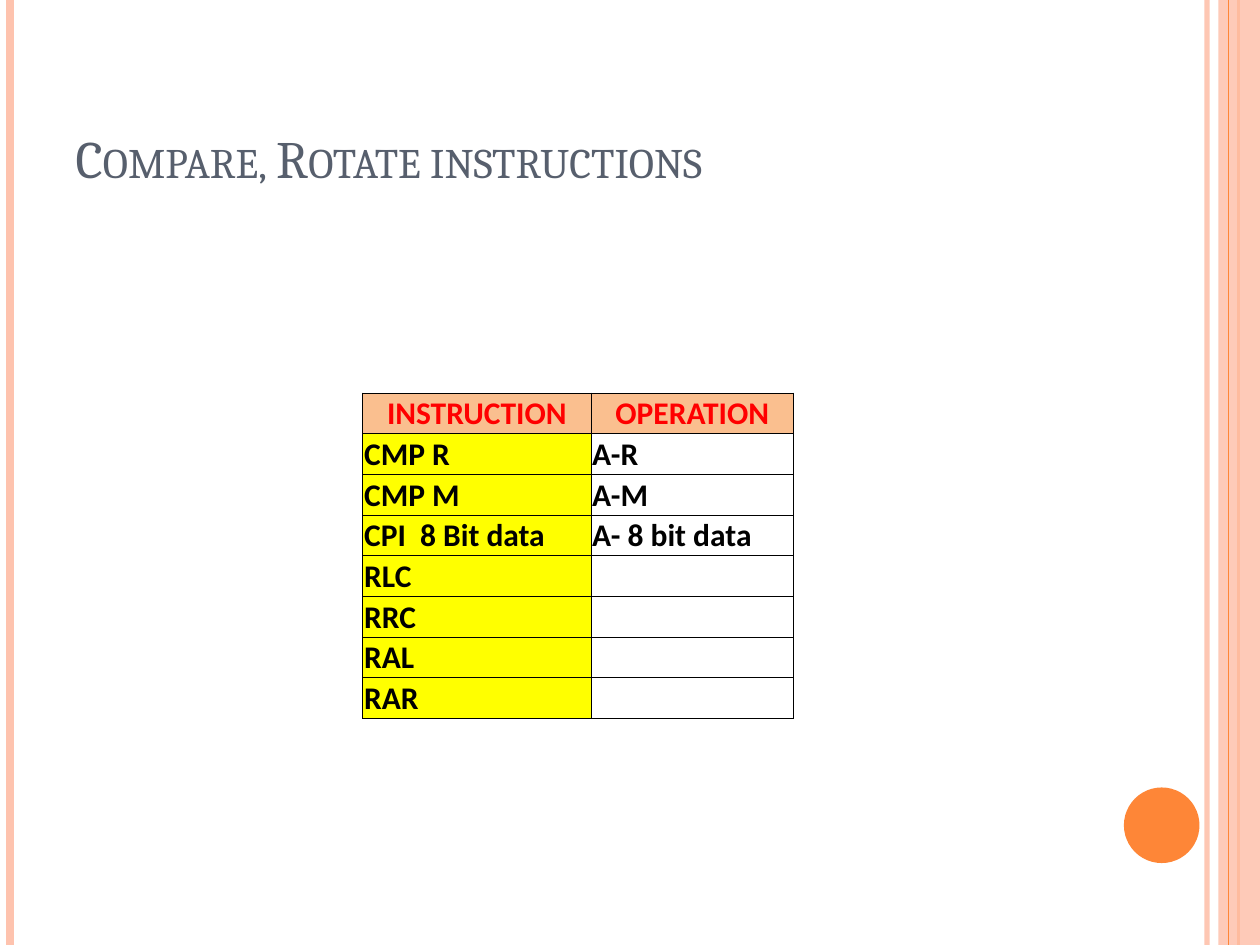
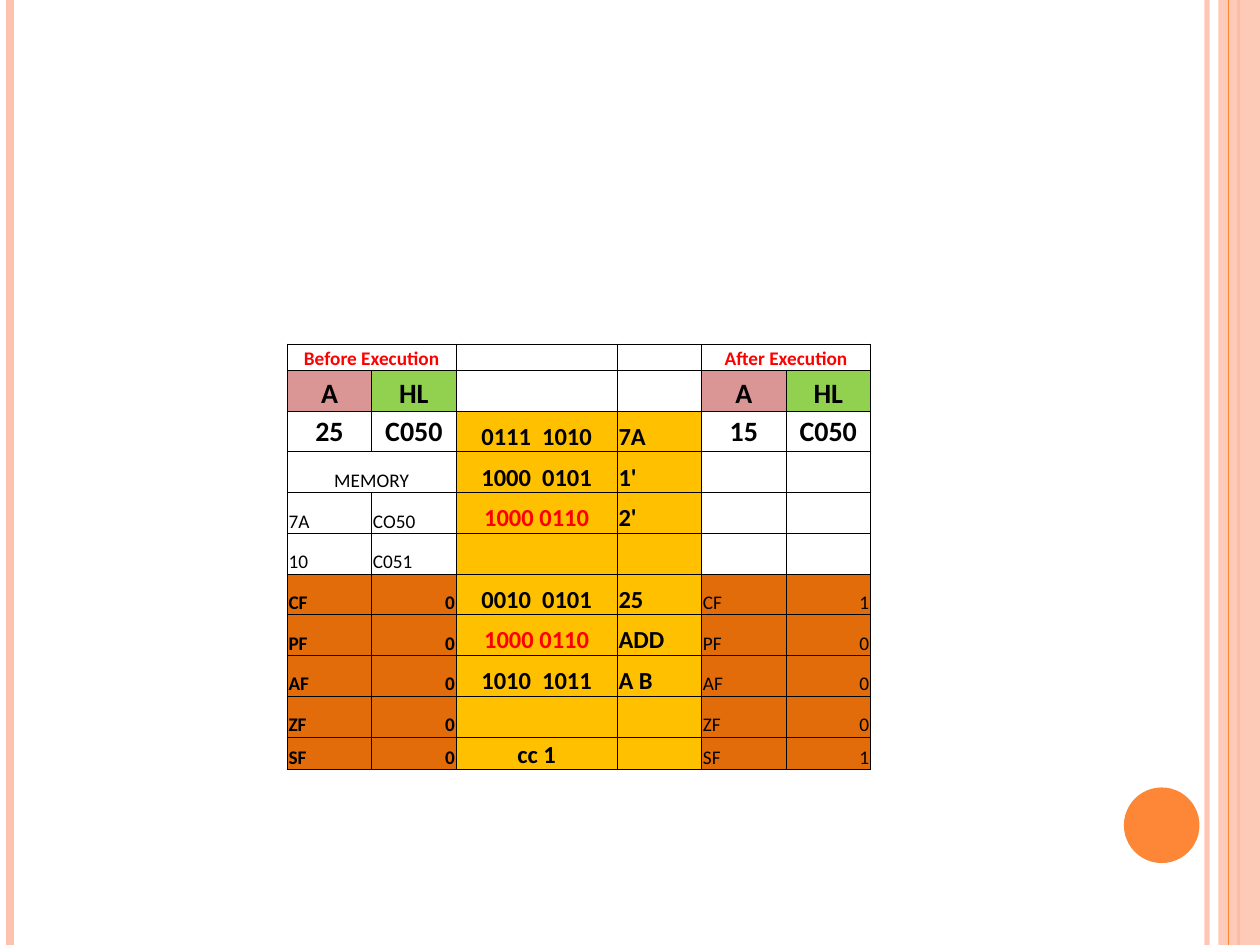
from dataclasses import dataclass, replace
from typing import NamedTuple

from lxml.etree import SubElement
from pptx import Presentation
from pptx.dml.color import RGBColor
from pptx.enum.shapes import MSO_CONNECTOR, MSO_SHAPE
from pptx.enum.text import MSO_ANCHOR, PP_ALIGN
from pptx.oxml.ns import qn
from pptx.util import Inches, Pt

COLORS = {
    "peach": "FEC3AE", "orange": "FE8637", "slate": "575F6D",
    "black": "000000", "red": "FF0000", "sand": "FABF8F",
    "yellow": "FFFF00", "rose": "DA9694", "green": "92D050",
    "gold": "FFC000", "rust": "E26B0A",
}
SLIDE_W, SLIDE_H = 10, 7.5


class Rule(NamedTuple):
    """A full-height vertical line."""
    x: float
    color: str
    width: float
    alpha: int = 100


class Block(NamedTuple):
    """A filled decoration without an outline."""
    kind: MSO_SHAPE
    box: tuple[float, float, float, float]
    color: str
    alpha: int = 100


@dataclass(frozen=True)
class Style:
    """The look of a table cell."""
    size: int = 11
    bold: bool = True
    color: str = "black"
    fill: str | None = None
    align: PP_ALIGN = PP_ALIGN.LEFT
    anchor: MSO_ANCHOR = MSO_ANCHOR.BOTTOM


class Cell(NamedTuple):
    """A table cell with its column span."""
    text: str = ""
    style: Style = Style()
    span: int = 1


DECOR = (
    Rule(9.58, "peach", 3, 93),
    Rule(0.08, "peach", 4.5),
    Rule(9.83, "orange", 1.5),
    Block(MSO_SHAPE.RECTANGLE, (9.67, 0, 0.33, SLIDE_H), "peach", 87),
    Rule(9.75, "orange", 0.75),
    Block(MSO_SHAPE.OVAL, (8.92, 6.25, 0.6, 0.6), "orange"),
)

CENTER, RIGHT = PP_ALIGN.CENTER, PP_ALIGN.RIGHT
OPCODE = Style(size=18, fill="yellow", anchor=MSO_ANCHOR.MIDDLE)
OPERATION = replace(OPCODE, fill=None)
HEADING = replace(OPCODE, color="red", fill="sand", align=CENTER)

PHASE = Style(color="red", align=CENTER)
REG_A = Style(size=16, fill="rose", align=CENTER)
REG_HL = replace(REG_A, fill="green")
REG_VALUE = replace(REG_A, fill=None, anchor=MSO_ANCHOR.MIDDLE)
MEMORY = Style(bold=False)
BITS = Style(size=14, fill="gold", align=CENTER)
RED_BITS = replace(BITS, color="red")
NOTE = replace(BITS, align=PP_ALIGN.LEFT)
FLAG = Style(fill="rust")

INSTRUCTIONS = (
    ("CMP R", "A-R"), ("CMP M", "A-M"), ("CPI  8 Bit data", "A- 8 bit data"),
    ("RLC", ""), ("RRC", ""), ("RAL", ""), ("RAR", ""),
)
FLAGS = (
    ("CF", "0", "1", "0010  0101", "25", BITS),
    ("PF", "0", "0", "1000 0110", "ADD", RED_BITS),
    ("AF", "0", "0", "1010  1011", "A B", BITS),
    ("ZF", "0", "0", "", "", BITS),
    ("SF", "0", "1", "cc 1", "", BITS),
)


def rgb(name: str) -> RGBColor:
    """Look up a palette colour."""
    return RGBColor.from_string(COLORS[name])


def set_alpha(s, alpha: int) -> None:
    """Make the colours of a shape partly transparent."""
    if alpha < 100:
        for clr in s._element.spPr.iter(qn("a:srgbClr")):
            SubElement(clr, qn("a:alpha"), val=str(alpha * 1000))


def write(tf, text: str, *, size: int, font: str = "Calibri",
          color: str = "black", bold: bool = False,
          align: PP_ALIGN = PP_ALIGN.LEFT, small_caps: bool = False) -> None:
    """Put one formatted line into a text frame."""
    p = tf.paragraphs[0]
    p.alignment = align
    if not text:
        SubElement(p._p, qn("a:endParaRPr"), sz=str(size * 100))
        return
    r = p.add_run()
    r.text = text
    r.font.size, r.font.name, r.font.bold = Pt(size), font, bold
    r.font.color.rgb = rgb(color)
    if small_caps:
        r.font._element.set("cap", "small")


def draw_rule(slide, rule: Rule) -> None:
    """Draw a vertical line from top to bottom."""
    x = Inches(rule.x)
    s = slide.shapes.add_connector(MSO_CONNECTOR.STRAIGHT, x, 0, x, Inches(SLIDE_H))
    s.line.color.rgb = rgb(rule.color)
    s.line.width = Pt(rule.width)
    set_alpha(s, rule.alpha)
    SubElement(s._element.spPr, qn("a:effectLst"))


def draw_block(slide, block: Block) -> None:
    """Draw a filled decoration."""
    s = slide.shapes.add_shape(block.kind, *map(Inches, block.box))
    s.shadow.inherit = False
    s.fill.solid()
    s.fill.fore_color.rgb = rgb(block.color)
    s.line.fill.background()
    set_alpha(s, block.alpha)


def add_slide(prs, title: str = ""):
    """Add a decorated slide, with a title if one is given."""
    slide = prs.slides.add_slide(prs.slide_layouts[5 if title else 6])
    for item in DECOR:
        (draw_rule if isinstance(item, Rule) else draw_block)(slide, item)
    if title:
        s = slide.shapes.title
        s.left, s.top, s.width, s.height = map(Inches, (0.5, 0.3, 8.17, 1.25))
        s.text_frame.vertical_anchor = MSO_ANCHOR.BOTTOM
        write(s.text_frame, title, size=30, font="Cambria", color="slate",
              small_caps=True)
    return slide


def draw_cell(c, text: str, style: Style) -> None:
    """Fill, outline and write a table cell."""
    tc_pr = c._tc.get_or_add_tcPr()
    for side in ("lnL", "lnR", "lnT", "lnB"):
        ln = SubElement(tc_pr, qn(f"a:{side}"), w=str(Pt(0.5)))
        SubElement(SubElement(ln, qn("a:solidFill")), qn("a:srgbClr"), val=COLORS["black"])
    if style.fill:
        c.fill.solid()
        c.fill.fore_color.rgb = rgb(style.fill)
    else:
        c.fill.background()
    c.margin_left = c.margin_right = c.margin_top = Inches(0.01)
    c.margin_bottom = 0
    c.vertical_anchor = style.anchor
    write(c.text_frame, text, size=style.size, color=style.color,
          bold=style.bold, align=style.align)


def draw_table(slide, left: float, top: float, widths: list[float],
               heights: list[float], rows: list[list[Cell]]) -> None:
    """Draw a table row by row, merging spanned cells."""
    box = map(Inches, (left, top, sum(widths), sum(heights)))
    table = slide.shapes.add_table(len(heights), len(widths), *box).table
    table.first_row = table.horz_banding = False
    for col, width in zip(table.columns, widths):
        col.width = Inches(width)
    for i, (row, height) in enumerate(zip(rows, heights)):
        table.rows[i].height = Inches(height)
        j = 0
        for cell in row:
            for k in range(cell.span):
                draw_cell(table.cell(i, j + k), "" if k else cell.text, cell.style)
            if cell.span > 1:
                table.cell(i, j).merge(table.cell(i, j + cell.span - 1))
            j += cell.span


def instruction_rows() -> list[list[Cell]]:
    """List the compare and rotate instructions."""
    head = [Cell(text, HEADING) for text in ("INSTRUCTION", "OPERATION")]
    return [head] + [[Cell(code, OPCODE), Cell(operation, OPERATION)]
                     for code, operation in INSTRUCTIONS]


def execution_rows() -> list[list[Cell]]:
    """List registers, memory and flags before and after execution."""
    blank = [Cell(), Cell()]
    registers = [Cell("A", REG_A), Cell("HL", REG_HL)]
    before, after = ([Cell(a, REG_VALUE), Cell("C050", REG_VALUE)] for a in ("25", "15"))
    rows = [
        [Cell("Before Execution", PHASE, 2), *blank, Cell("After Execution", PHASE, 2)],
        [*registers, *blank, *registers],
        [*before, Cell("0111  1010", BITS), Cell("7A", NOTE), *after],
        [Cell("MEMORY", replace(MEMORY, align=CENTER), 2),
         Cell("1000  0101", BITS), Cell("1'", NOTE), *blank],
        [Cell("7A", MEMORY), Cell("CO50", MEMORY),
         Cell("1000 0110", RED_BITS), Cell("2'", NOTE), *blank],
        [Cell("10", MEMORY), Cell("C051", MEMORY),
         Cell("", BITS), Cell("", NOTE), *blank],
    ]
    for flag, old, new, bits, note, bits_style in FLAGS:
        sides = []
        for value, bold in ((old, True), (new, False)):
            style = replace(FLAG, bold=bold)
            sides.append([Cell(flag, style), Cell(value, replace(style, align=RIGHT))])
        rows.append([*sides[0], Cell(bits, bits_style), Cell(note, NOTE), *sides[1]])
    return rows


def main() -> None:
    """Build and save both slides."""
    prs = Presentation()
    prs.slide_width, prs.slide_height = Inches(SLIDE_W), Inches(SLIDE_H)
    slide = add_slide(prs, "Compare, Rotate instructions")
    draw_table(slide, 2.88, 3.12, [1.81, 1.61], [2.58 / 8] * 8, instruction_rows())
    slide = add_slide(prs)
    draw_table(slide, 2.28, 2.73, [0.67, 0.67, 1.28, 0.67, 0.67, 0.67],
               [0.21, *[2.91 / 9] * 9, 0.26], execution_rows())
    prs.save("out.pptx")


if __name__ == "__main__":
    main()
